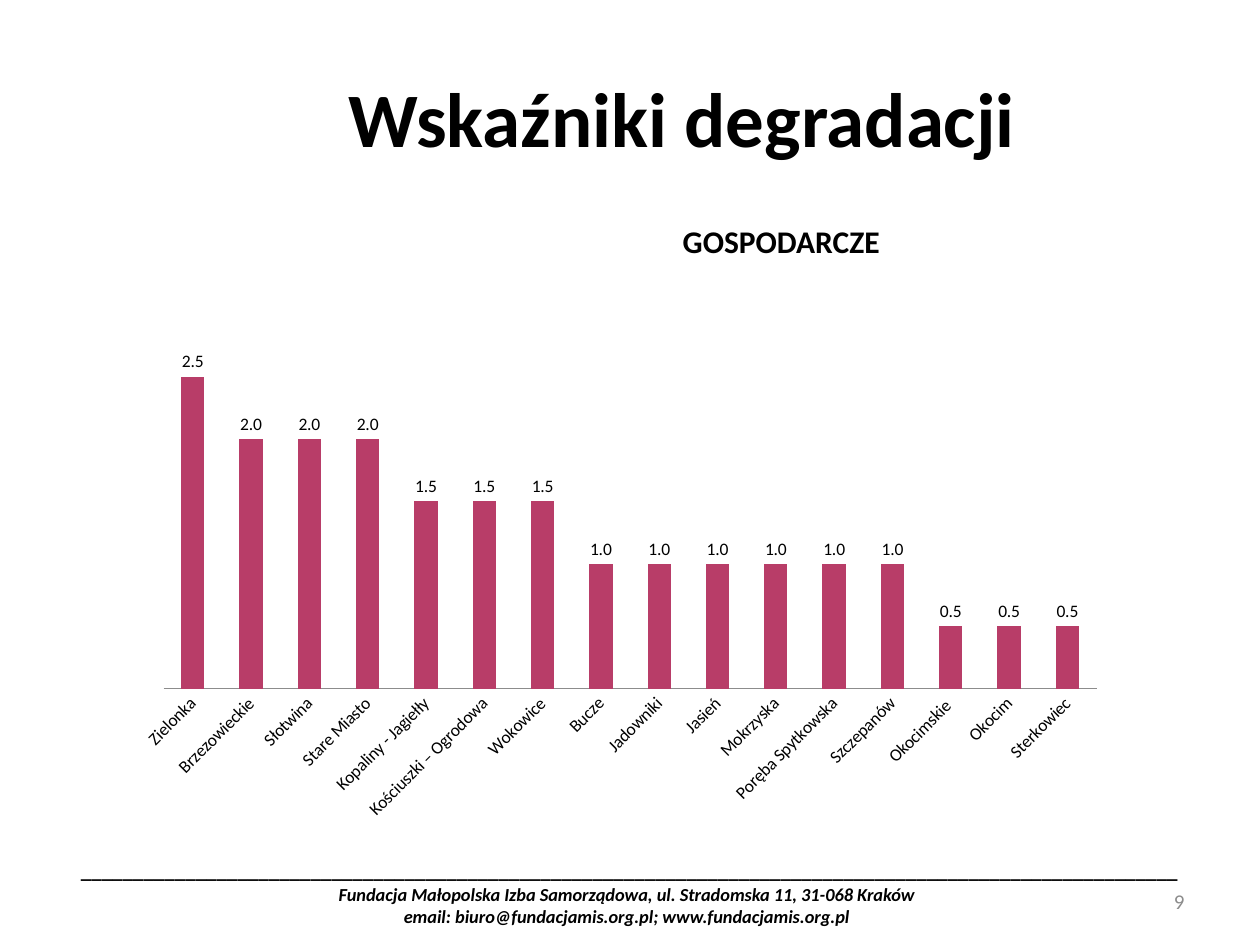
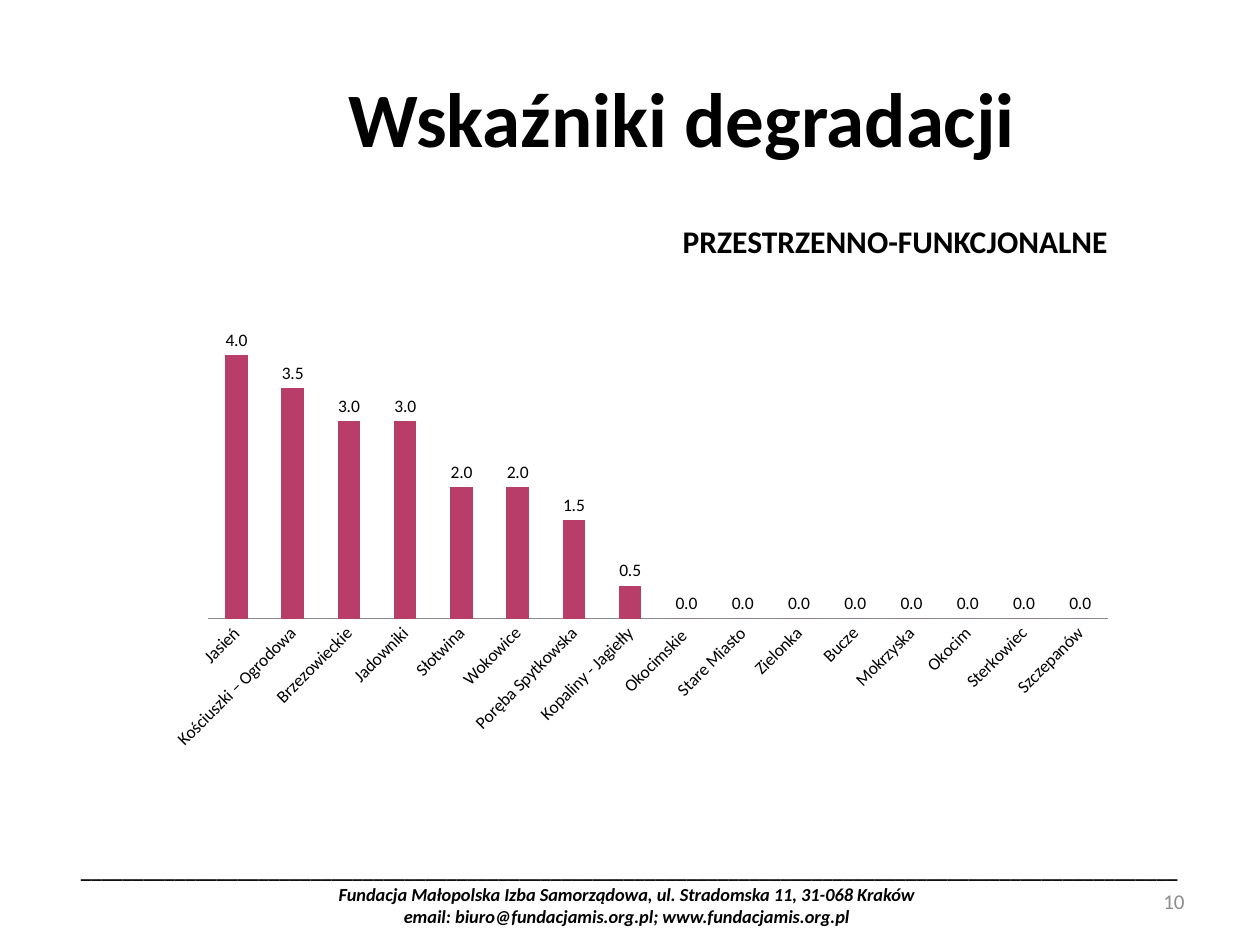
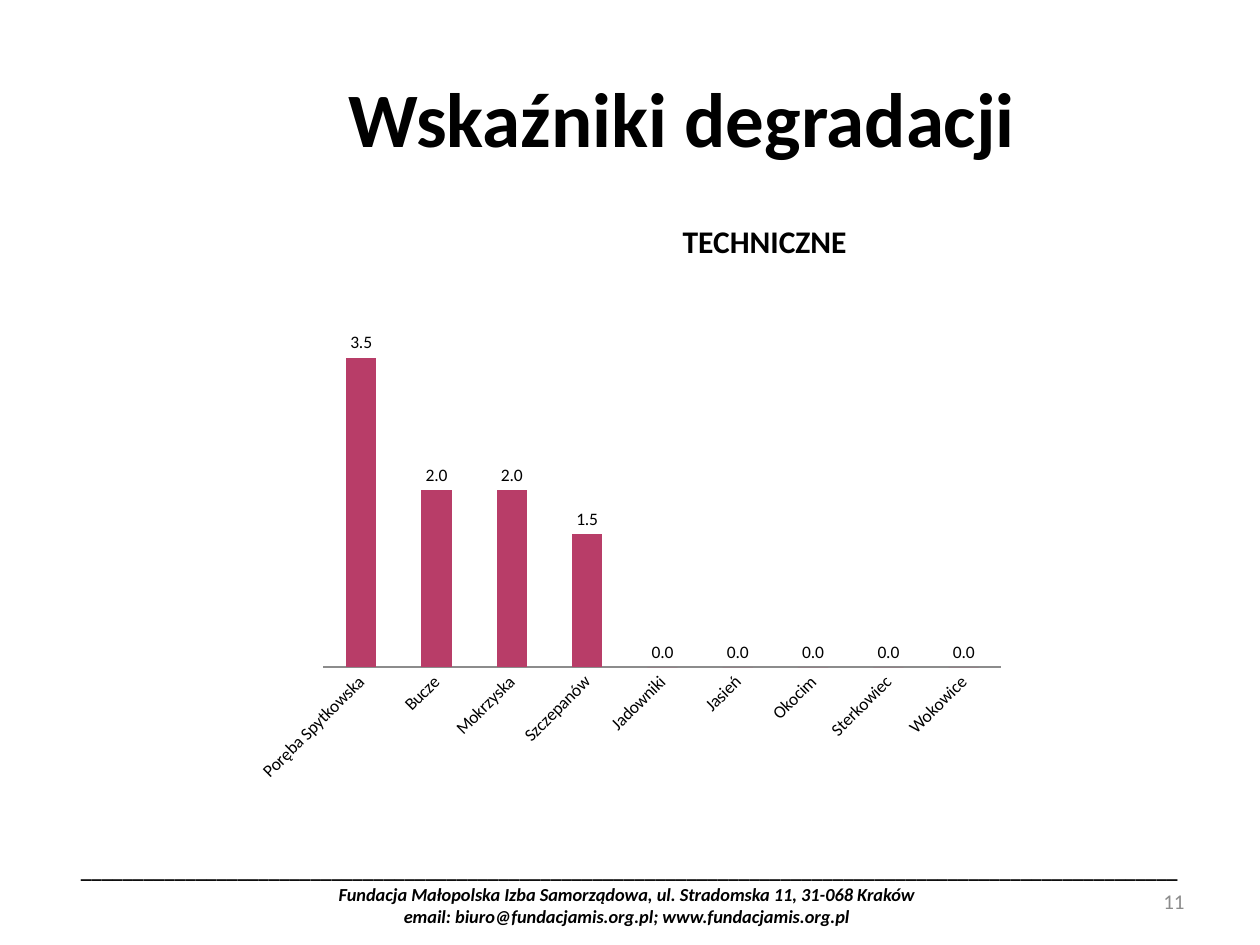
from dataclasses import dataclass

from pptx import Presentation
from pptx.chart.data import CategoryChartData
from pptx.dml.color import RGBColor
from pptx.enum.chart import XL_CHART_TYPE, XL_LABEL_POSITION, XL_TICK_MARK
from pptx.enum.text import MSO_ANCHOR, PP_ALIGN
from pptx.oxml.ns import qn
from pptx.util import Inches, Pt


@dataclass
class Theme:
    font: str = "Calibri"
    ink: RGBColor = RGBColor(0, 0, 0)
    gray: RGBColor = RGBColor(0x8C, 0x8C, 0x8C)
    bar: RGBColor = RGBColor(0xB8, 0x3D, 0x68)
    title: float = 44
    head: float = 18
    page: float = 12
    foot: float = 10.5
    label: float = 10


theme = Theme()


def place(box):
    return [Inches(n) for n in box]


def write(slide, box, lines, size, color, align, anchor, bold=False, slant=False, left=0.1, top=0.05):
    frame = slide.shapes.add_textbox(*place(box)).text_frame
    frame.word_wrap = True
    frame.vertical_anchor = anchor
    frame.margin_left = Inches(left)
    frame.margin_top = Inches(top)
    para = frame.paragraphs[0]
    para.alignment = align
    for rank, line in enumerate(lines):
        if rank:
            para.add_line_break()
        run = para.add_run()
        run.text = line
        font = run.font
        font.name = theme.font
        font.size = Pt(size)
        font.color.rgb = color
        font.bold = bold
        font.italic = slant


pages = [
    ("GOSPODARCZE", 3.39, (0.99, 2.41, 7.87, 4.18), 3, [
        ("Zielonka", 2.5), ("Brzezowieckie", 2), ("Słotwina", 2), ("Stare Miasto", 2),
        ("Kopaliny - Jagiełły", 1.5), ("Kościuszki – Ogrodowa", 1.5), ("Wokowice", 1.5),
        ("Bucze", 1), ("Jadowniki", 1), ("Jasień", 1), ("Mokrzyska", 1),
        ("Poręba Spytkowska", 1), ("Szczepanów", 1), ("Okocimskie ", 0.5),
        ("Okocim", 0.5), ("Sterkowiec", 0.5),
    ]),
    ("PRZESTRZENNO-FUNKCJONALNE", 4.09, (1.22, 2.49, 7.73, 3.53), 4.5, [
        ("Jasień", 4), ("Kościuszki – Ogrodowa", 3.5), ("Brzezowieckie", 3), ("Jadowniki", 3),
        ("Słotwina", 2), ("Wokowice", 2), ("Poręba Spytkowska", 1.5),
        ("Kopaliny - Jagiełły", 0.5), ("Okocimskie ", 0), ("Stare Miasto", 0),
        (" Zielonka", 0), ("Bucze", 0), ("Mokrzyska", 0), ("Okocim", 0),
        ("Sterkowiec", 0), ("Szczepanów", 0),
    ]),
    ("TECHNICZNE", 2.83, (1.93, 2.41, 6.14, 3.87), 4, [
        ("Poręba Spytkowska", 3.5), ("Bucze", 2), ("Mokrzyska", 2), ("Szczepanów", 1.5),
        ("Jadowniki", 0), ("Jasień", 0), ("Okocim", 0), ("Sterkowiec", 0), ("Wokowice", 0),
    ]),
]
contact = [
    "Fundacja Małopolska Izba Samorządowa, ul. Stradomska 11, 31-068 Kraków",
    "email: biuro@fundacjamis.org.pl; www.fundacjamis.org.pl",
]

deck = Presentation()
deck.slide_width = Inches(10)
deck.slide_height = Inches(7.5)

for page, (head, width, area, peak, rows) in enumerate(pages, 9):
    slide = deck.slides.add_slide(deck.slide_layouts[6])
    write(slide, (0.5, 0.3, 9, 1.25), ["Wskaźniki degradacji"], theme.title, theme.ink,
          PP_ALIGN.CENTER, MSO_ANCHOR.MIDDLE, bold=True, left=0.93)

    write(slide, (0.51, 6.81, 8.98, 0.2), ["_" * 105], theme.page, theme.ink,
          PP_ALIGN.CENTER, MSO_ANCHOR.TOP, bold=True, top=0)
    write(slide, (0.51, 6.82, 8.98, 0.53), contact, theme.foot, theme.ink,
          PP_ALIGN.CENTER, MSO_ANCHOR.TOP, bold=True, slant=True, left=0.05, top=0.19)
    write(slide, (7.17, 6.95, 2.33, 0.4), [str(page)], theme.page, theme.gray,
          PP_ALIGN.RIGHT, MSO_ANCHOR.MIDDLE)
    write(slide, (5.32, 1.71, width, 0.4), [head], theme.head, theme.ink,
          PP_ALIGN.LEFT, MSO_ANCHOR.TOP, bold=True)

    data = CategoryChartData(number_format="0.0")
    data.categories = [name for name, value in rows]
    data.add_series("Series 1", [value for name, value in rows])
    chart = slide.shapes.add_chart(XL_CHART_TYPE.COLUMN_CLUSTERED, *place(area), data).chart
    chart.has_legend = False
    chart.has_title = False
    chart.font.name = theme.font
    chart.font.size = Pt(theme.label)
    chart.font.color.rgb = theme.ink

    scale = chart.value_axis
    scale.visible = False
    scale.has_major_gridlines = False
    scale.minimum_scale = 0
    scale.maximum_scale = peak
    scale.tick_labels.number_format = "0.0"
    scale.tick_labels.number_format_is_linked = False

    base = chart.category_axis
    base.major_tick_mark = XL_TICK_MARK.NONE
    base.format.line.color.rgb = theme.gray
    base.tick_labels.font.size = Pt(theme.label)
    base._element.find(qn("c:txPr")).find(qn("a:bodyPr")).set("rot", "-2700000")

    plot = chart.plots[0]
    plot.gap_width = 150
    plot.vary_by_categories = False
    fill = plot.series[0].format.fill
    fill.solid()
    fill.fore_color.rgb = theme.bar
    plot.has_data_labels = True
    marks = plot.data_labels
    marks.show_value = True
    marks.number_format = "0.0"
    marks.number_format_is_linked = False
    marks.position = XL_LABEL_POSITION.OUTSIDE_END

deck.save("out.pptx")
